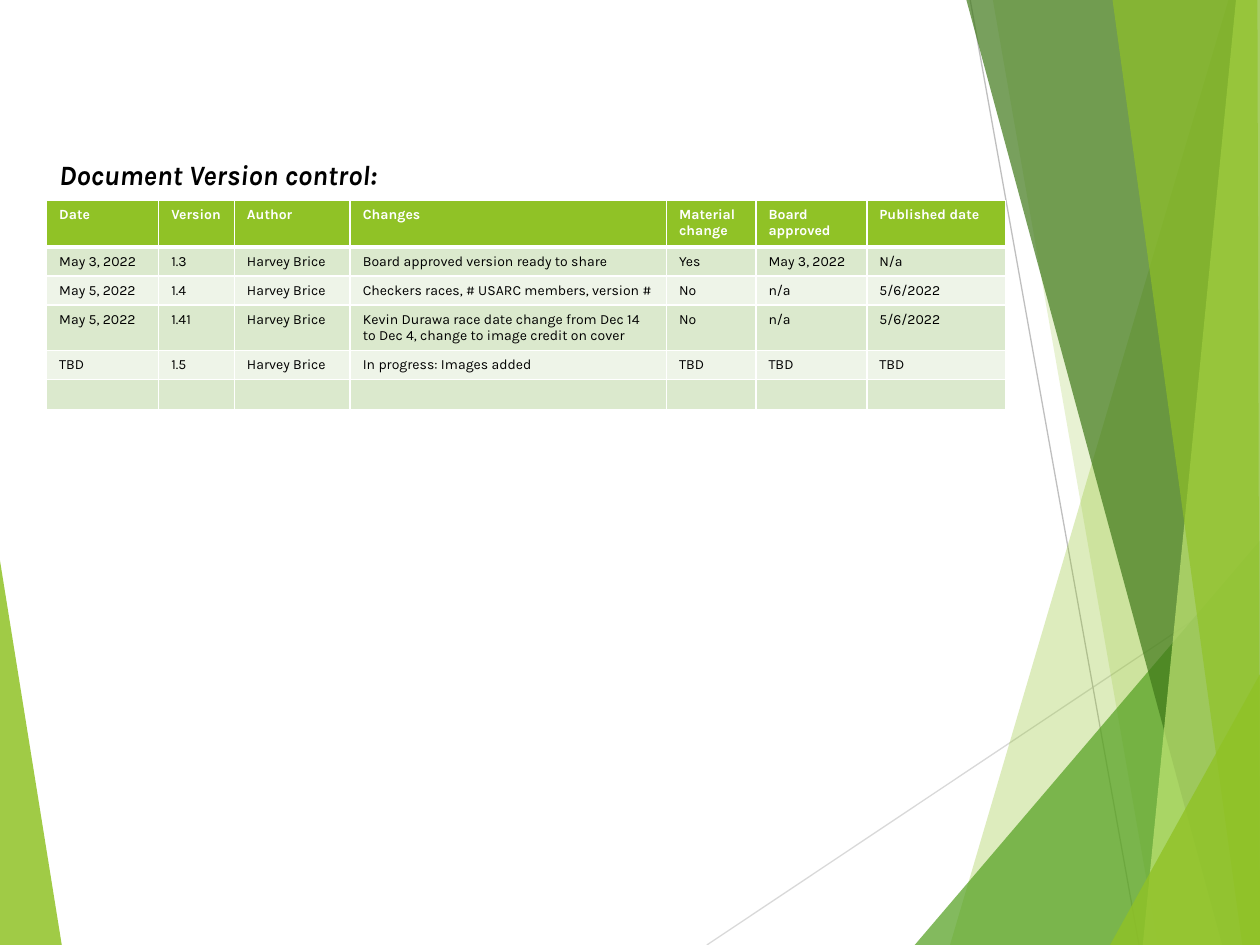
from pptx import Presentation
from pptx import util as u
from pptx.dml import color
from pptx.enum import shapes, text
from pptx.oxml import parse_xml
from pptx.oxml.ns import nsdecls
from lxml import etree

WIDE, HIGH = 10, 7.5
HEAD = "Document Version control:"
ROWS = [
    ("Date", "Version", "Author", "Changes", "Material change", "Board approved", "Published date"),
    ("May 3, 2022", "1.3", "Harvey Brice", "Board approved version ready to share", "Yes", "May 3, 2022", "N/a"),
    ("May 5, 2022", "1.4", "Harvey Brice", "Checkers races, # USARC members, version #", "No", "n/a", "5/6/2022"),
    ("May 5, 2022", "1.41", "Harvey Brice",
     "Kevin Durawa race date change from Dec 14 to Dec 4, change to image credit on cover", "No", "n/a", "5/6/2022"),
    ("TBD", "1.5", "Harvey Brice", "In progress: Images added", "TBD", "TBD", "TBD"),
    ("",) * 7,
]
COLS = [0.89, 0.6, 0.92, 2.51, 0.71, 0.88, 1.1]
TALL = [0.37, 0.23, 0.23, 0.35, 0.23, 0.23]
LEFT, TOP = 0.37, 1.59
BANDS = ["EEF4E8", "DBE9CD"]
LIME, WHITE, BLACK = "90C226", "FFFFFF", "000000"
WEDGE = (LIME, 85, [(0, 4.45), (0.49, HIGH), (0, HIGH)])
LINES = [("D9D9D9", (5.61, HIGH), (WIDE, 4.57)), ("BFBFBF", (7.7, 0), (9.04, HIGH))]
SHARDS = [
    (LIME, 30, [(9.75, 0), (7.54, HIGH), (WIDE, HIGH), (WIDE, 0)]),
    (LIME, 20, [(7.88, 0), (9.19, HIGH), (WIDE, HIGH), (WIDE, 0)]),
    ("54A021", 72, [(7.26, HIGH), (WIDE, 4.29), (WIDE, HIGH)]),
    ("3F7819", 70, [(7.67, 0), (9.7, HIGH), (WIDE, HIGH), (WIDE, 0)]),
    ("C0E474", 70, [(9.81, 0), (9.07, HIGH), (WIDE, HIGH), (WIDE, 0)]),
    (LIME, 65, [(8.83, 0), (9.86, HIGH), (WIDE, HIGH), (9.98, 0)]),
    (LIME, 80, [(8.81, HIGH), (WIDE, 5.35), (WIDE, HIGH)]),
]


def paint(fill, tone):
    fill.solid()
    fill.fore_color.rgb = color.RGBColor.from_string(tone)


def style(font, tone, **look):
    paint(font.fill, tone)
    for key, val in {"name": "Karla", **look}.items():
        setattr(font, key, val)


def shard(slide, tone, alpha, pts):
    spots = [(u.Inches(x), u.Inches(y)) for x, y in pts]
    pen = slide.shapes.build_freeform(*spots[0])
    pen.add_line_segments(spots[1:], close=True)
    shape = pen.convert_to_shape()
    shape.shadow.inherit = False
    shape.line.fill.background()
    paint(shape.fill, tone)
    node = shape.fill._xPr.find(".//{*}srgbClr")
    node.append(parse_xml(f'<a:alpha {nsdecls("a")} val="{alpha * 1000}"/>'))


def rule(slide, tone, start, end):
    line = slide.shapes.add_connector(
        shapes.MSO_CONNECTOR.STRAIGHT, *map(u.Inches, start + end))
    paint(line.line.fill, tone)
    line.line.width = u.Pt(0.75)
    etree.SubElement(line._element.spPr, "{http://schemas.openxmlformats.org/drawingml/2006/main}effectLst")


def edge(cell, foot):
    props = cell._tc.get_or_add_tcPr()
    for side, size in {"L": 1, "R": 1, "T": 1, "B": foot}.items():
        props.append(parse_xml(
            f'<a:ln{side} {nsdecls("a")} w="{u.Pt(size)}"><a:solidFill>'
            f'<a:srgbClr val="{WHITE}"/></a:solidFill></a:ln{side}>'))


def table(slide):
    grid = slide.shapes.add_table(
        len(ROWS), len(COLS), *map(u.Inches, (LEFT, TOP, sum(COLS), sum(TALL)))).table
    for col, wide in zip(grid.columns, COLS):
        col.width = u.Inches(wide)
    for r, (row, high) in enumerate(zip(ROWS, TALL)):
        grid.rows[r].height = u.Inches(high)
        head = r == 0
        for c, word in enumerate(row):
            cell = grid.cell(r, c)
            edge(cell, 3 if head else 1)
            paint(cell.fill, LIME if head else BANDS[r % 2])
            para = cell.text_frame.paragraphs[0]
            if word:
                run = para.add_run()
                run.text = word
                style(run.font, WHITE if head else BLACK, size=u.Pt(8), bold=head)
            else:
                para._p.get_or_add_endParaRPr().set("sz", "800")


def title(slide):
    box = slide.shapes.title
    spot = {"left": LEFT, "top": 1.2, "width": sum(COLS), "height": 0.37}
    for key, val in spot.items():
        setattr(box, key, u.Inches(val))
    frame = box.text_frame
    frame.text = HEAD
    frame.word_wrap = True
    frame.auto_size = text.MSO_AUTO_SIZE.NONE
    frame.vertical_anchor = text.MSO_ANCHOR.TOP
    para = frame.paragraphs[0]
    para.alignment = text.PP_ALIGN.LEFT
    style(para.runs[0].font, BLACK, size=u.Pt(16), bold=True, italic=True)


def main():
    """Build the version control slide."""
    deck = Presentation()
    deck.slide_width, deck.slide_height = u.Inches(WIDE), u.Inches(HIGH)
    slide = deck.slides.add_slide(deck.slide_layouts[5])
    shard(slide, *WEDGE)
    for line in LINES:
        rule(slide, *line)
    for item in SHARDS:
        shard(slide, *item)
    table(slide)
    title(slide)
    deck.save("out.pptx")


if __name__ == "__main__":
    main()
